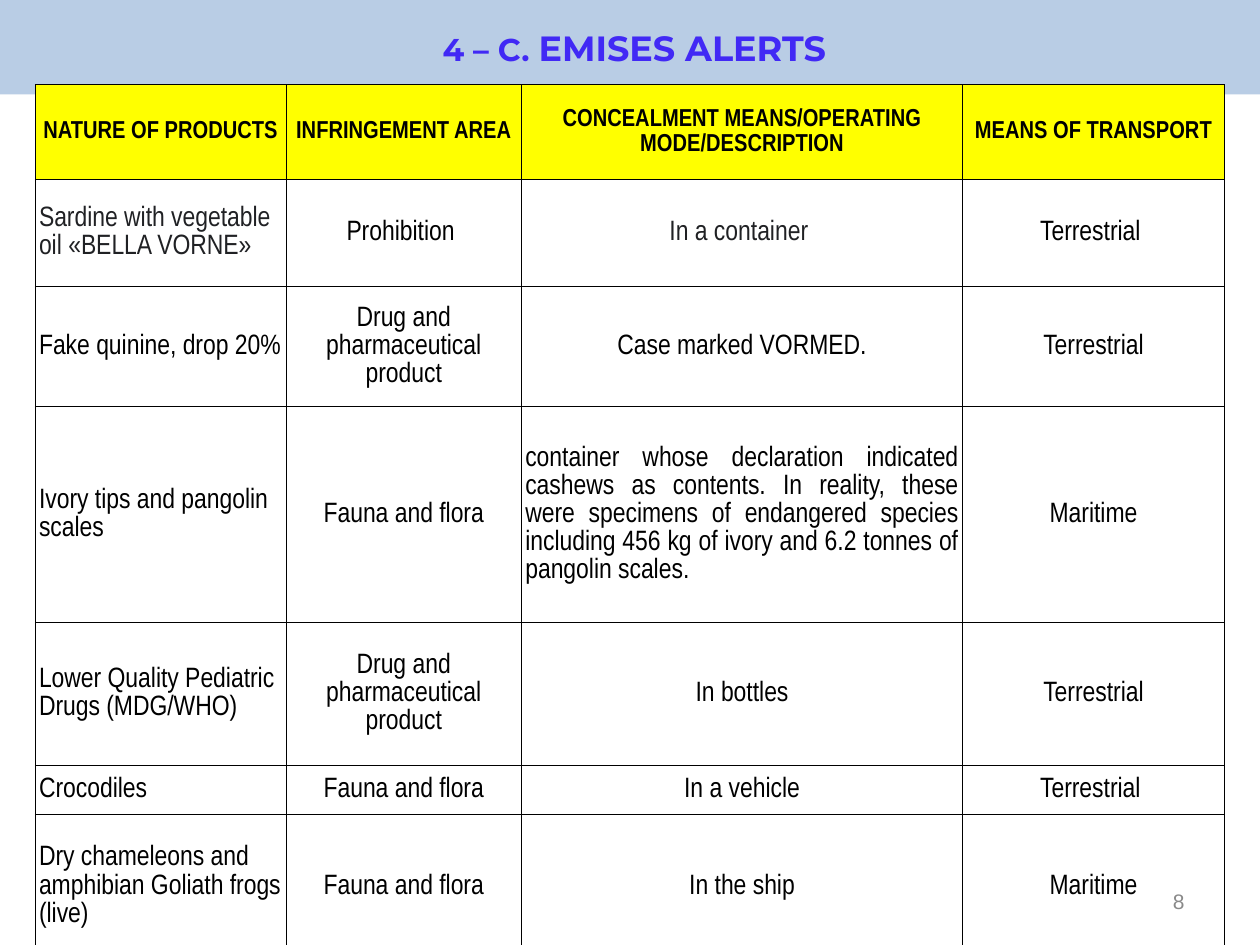
from lxml import etree
from pptx import Presentation
from pptx.dml.color import RGBColor
from pptx.enum.shapes import MSO_SHAPE
from pptx.enum.text import MSO_ANCHOR, PP_ALIGN
from pptx.oxml.ns import qn
from pptx.util import Inches, Pt

RECT = MSO_SHAPE.RECTANGLE
MID = MSO_ANCHOR.MIDDLE
LEFT, MIDST, RIGHT, FULL = (
    PP_ALIGN.LEFT, PP_ALIGN.CENTER, PP_ALIGN.RIGHT, PP_ALIGN.JUSTIFY)

HUES = {
    "band": "B9CDE5", "title": "4129F5", "head": "FFFF00",
    "text": "000000", "soft": "202124", "page": "898989",
}
COLS = [1.99, 1.87, 3.5, 2.08]
ROWS = [0.75, 0.85, 0.85, 1.71, 1.14, 0.29, 1.14]
DRUG = "Drug and pharmaceutical product"
FAUNA = "Fauna and flora"
CARGO = (
    "container whose declaration indicated cashews as contents. "
    "In reality, these were specimens of endangered species including "
    "456 kg of ivory and 6.2 tonnes of pangolin scales."
)
HEADS = ["NATURE OF PRODUCTS", "INFRINGEMENT AREA",
         "CONCEALMENT MEANS/OPERATING MODE/DESCRIPTION",
         "MEANS OF TRANSPORT"]
ALERTS = [
    ["Sardine with vegetable oil «BELLA VORNE»", "Prohibition ",
     "In a container ", "Terrestrial "],
    ["Fake quinine, drop 20%", DRUG, "Case marked VORMED.", "Terrestrial"],
    ["Ivory tips and pangolin scales", FAUNA, CARGO, "Maritime"],
    ["Lower Quality Pediatric Drugs (MDG/WHO)", DRUG, "In bottles",
     "Terrestrial"],
    ["Crocodiles", FAUNA, "In a vehicle", "Terrestrial "],
    ["Dry chameleons and amphibian Goliath frogs (live)", FAUNA,
     "In the ship", "Maritime"],
]
SOFT = {(1, 0), (1, 2)}


def box(at):
    return [Inches(n) for n in at]


def paint(fill, hue):
    fill.solid()
    fill.fore_color.rgb = RGBColor.from_string(HUES[hue])


def add_run(para, text, hue, **form):
    run = para.add_run()
    run.text = text
    for key, val in form.items():
        setattr(run.font, key, val)
    run.font.color.rgb = RGBColor.from_string(HUES[hue])


def add_title(slide):
    band = slide.shapes.add_shape(RECT, *box((0, 0, 10, 0.75)))
    band.shadow.inherit = False
    band.line.fill.background()
    paint(band.fill, "band")
    band.text_frame.vertical_anchor = MID
    para = band.text_frame.paragraphs[0]
    para.alignment = MIDST
    for text, size in ((" 4 – C. ", 18), ("EMISES ALERTS", 20)):
        add_run(para, text, "title", name="Montserrat", size=Pt(size),
                bold=True)


def add_page(slide):
    frame = slide.shapes.add_textbox(*box((7.17, 6.95, 2.33, 0.4))).text_frame
    frame.word_wrap = True
    frame.vertical_anchor = MID
    para = frame.paragraphs[0]
    para.alignment = RIGHT
    add_run(para, "8", "page", name="Arial", size=Pt(12))


def edge(cell):
    """Draw a thin line on all four sides, placed ahead of the cell fill."""
    props = cell._tc.get_or_add_tcPr()
    for spot, side in enumerate(("a:lnL", "a:lnR", "a:lnT", "a:lnB")):
        line = etree.Element(qn(side), w=str(Pt(0.45)))
        fill = etree.SubElement(line, qn("a:solidFill"))
        etree.SubElement(fill, qn("a:srgbClr"), val=HUES["text"])
        props.insert(spot, line)


def fill_cell(cell, text, align, hue, size, bold):
    form = {
        "margin_left": Inches(0.03), "margin_right": Inches(0.03),
        "margin_top": Inches(0.05), "margin_bottom": Inches(0.05),
        "vertical_anchor": MID,
    }
    for key, val in form.items():
        setattr(cell, key, val)
    if bold:
        paint(cell.fill, "head")
    else:
        cell.fill.background()
    edge(cell)
    para = cell.text_frame.paragraphs[0]
    para.alignment = align
    para.line_spacing = 1.07
    add_run(para, text, hue, name="Arial Narrow", size=Pt(size), bold=bold)


def add_grid(slide):
    at = box((0.28, 0.67, sum(COLS), sum(ROWS)))
    grid = slide.shapes.add_table(len(ROWS), len(COLS), *at).table
    for col, wide in zip(grid.columns, COLS):
        col.width = Inches(wide)
    for row, tall in zip(grid.rows, ROWS):
        row.height = Inches(tall)
    for r, texts in enumerate([HEADS] + ALERTS):
        head = r == 0
        for c, text in enumerate(texts):
            align = MIDST
            if text == CARGO:
                align = FULL
            elif c == 0 and not head:
                align = LEFT
            hue = "soft" if (r, c) in SOFT else "text"
            fill_cell(grid.cell(r, c), text, align, hue,
                      14 if head else 16, head)


def main():
    deck = Presentation()
    deck.slide_width, deck.slide_height = Inches(10), Inches(7.5)
    slide = deck.slides.add_slide(deck.slide_layouts[6])
    add_title(slide)
    add_page(slide)
    add_grid(slide)
    deck.save("out.pptx")


if __name__ == "__main__":
    main()
